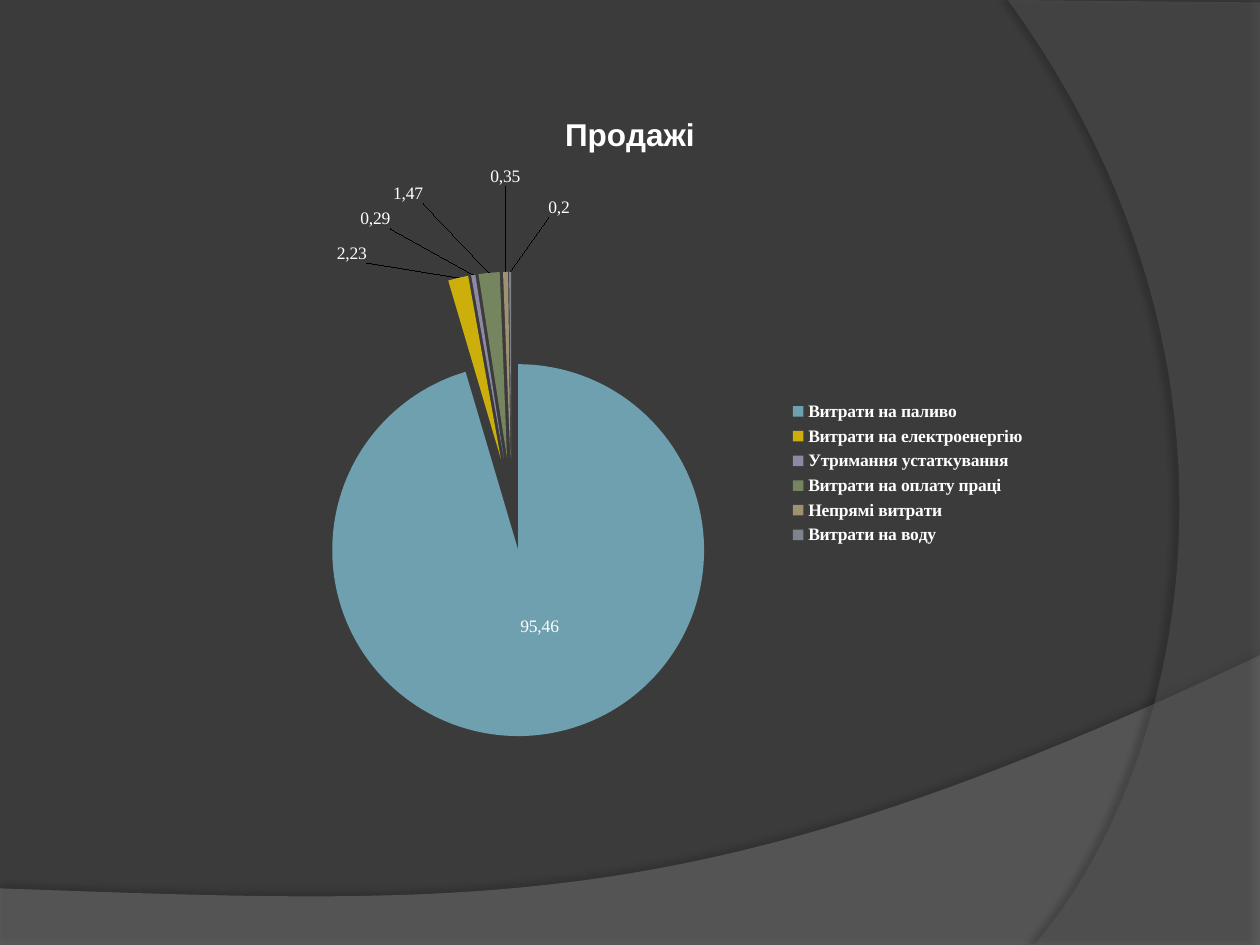
from lxml import etree
from pptx import Presentation
from pptx import util as u
from pptx.chart.data import CategoryChartData
from pptx.dml.color import RGBColor
from pptx.enum import chart as kinds
from pptx.oxml import ns

HUES = {"back": "3B3B3B", "wave": "7F7F7F", "arc": "5E5E5E", "text": "FFFFFF", "dark": "000000"}
COSTS = [
    ("Витрати на паливо", 95.53, "95,46", "6EA0B0", (0.01, -0.02)),
    ("Витрати на електроенергію", 1.75, "2,23", "CCAF0A", (-0.11, -0.01)),
    ("Утримання устаткування", 0.36, "0,29", "8D89A4", (-0.1, -0.05)),
    ("Витрати на оплату праці", 1.83, "1,47", "748560", (-0.08, -0.08)),
    ("Непрямі витрати", 0.44, "0,35", "9E9273", (0, -0.1)),
    ("Витрати на воду", 0.19, "0,2", "7E848D", (0.06, -0.06)),
]


def bend(a, b, c, d, steps=48):
    """Return points along a cubic curve from a to d."""
    rows = []
    for i in range(1, steps + 1):
        t = i / steps
        s = 1 - t
        rows.append(tuple(s**3 * p + 3 * s * s * t * q + 3 * s * t * t * r + t**3 * e
                          for p, q, r, e in zip(a, b, c, d)))
    return rows


def add(node, tag, **attrs):
    """Append a child element with the given attributes."""
    return etree.SubElement(node, ns.qn(tag), {k: str(v) for k, v in attrs.items()})


def place(node, index, modes=(), **spots):
    """Put a manual layout into a chart element."""
    for old in node.findall(ns.qn("c:layout")):
        node.remove(old)
    box = etree.Element(ns.qn("c:layout"))
    node.insert(index, box)
    hand = add(box, "c:manualLayout")
    for tag, val in modes:
        add(hand, "c:" + tag, val=val)
    for tag, val in spots.items():
        add(hand, "c:" + tag, val=val)


class Deck:
    """Hold the style and the current slide."""

    def __init__(self, hues):
        """Start a deck with one blank slide."""
        self.hues = hues
        self.show = Presentation()
        self.show.slide_width, self.show.slide_height = u.Cm(25.4), u.Cm(19.05)
        self.slide = self.show.slides.add_slide(self.show.slide_layouts[6])
        self.paint(self.slide.background.fill, hues["back"])

    def paint(self, fill, hue):
        """Make a fill solid."""
        fill.solid()
        fill.fore_color.rgb = RGBColor.from_string(hue)

    def style(self, font, size, face, bold=False):
        """Set a font in the text colour."""
        font.size, font.name, font.bold = u.Pt(size), face, bold
        font.color.rgb = RGBColor.from_string(self.hues["text"])

    def sheet(self, hue, edge, curve, alpha, shade, dist, angle):
        """Draw a see-through curved sheet with a soft shadow."""
        dots = [(u.Cm(x), u.Cm(y)) for x, y in edge + bend(edge[-1], *curve)]
        pen = self.slide.shapes.build_freeform(*dots[0])
        pen.add_line_segments(dots[1:], close=True)
        form = pen.convert_to_shape()
        self.paint(form.fill, self.hues[hue])
        form.line.fill.background()
        form.shadow.inherit = False
        props = form.element.spPr
        tint = props.find(ns.qn("a:solidFill"))[0]
        add(tint, "a:alpha", val=alpha * 1000)
        cast = add(props.find(ns.qn("a:effectLst")), "a:outerShdw", blurRad=u.Pt(4),
                   dist=u.Pt(dist), dir=angle * 60000, algn="ctr", rotWithShape=0)
        add(add(cast, "a:srgbClr", val=self.hues["dark"]), "a:alpha", val=shade * 1000)

    def pie(self, title, rows, *box):
        """Add an exploded pie chart with hand-placed labels."""
        data = CategoryChartData()
        data.categories = [row[0] for row in rows]
        data.add_series(title, [row[1] for row in rows])
        chart = self.slide.shapes.add_chart(
            kinds.XL_CHART_TYPE.PIE, *map(u.Cm, box), data).chart
        self.style(chart.font, 10, "Arial")
        chart.has_title = True
        head = chart.chart_title.text_frame
        head.text = title
        self.style(head.paragraphs[0].font, 18, "Arial", True)
        chart.has_legend = True
        chart.legend.position = kinds.XL_LEGEND_POSITION.RIGHT
        chart.legend.include_in_layout = False
        self.style(chart.legend.font, 10, "Times New Roman", True)
        plot = chart.plots[0]
        plot.vary_by_categories = True
        ser = plot.series[0]
        tags = ser.data_labels
        tags.show_value = True
        self.style(tags.font, 10, "Times New Roman")
        spots = kinds.XL_LABEL_POSITION
        for i, (_, _, label, hue, _) in enumerate(rows):
            point = ser.points[i]
            self.paint(point.format.fill, hue)
            tag = point.data_label
            tag.text_frame.text = label
            self.style(tag.text_frame.paragraphs[0].runs[0].font, 10, "Times New Roman")
            tag.position = spots.OUTSIDE_END if i else spots.CENTER
        root = chart.element
        for node, row in zip(root.xpath(".//c:dLbl"), rows):
            place(node, 1, x=row[4][0], y=row[4][1])
        for lead in root.xpath(".//c:showLeaderLines"):
            lead.set("val", "1")
        burst = etree.Element(ns.qn("c:explosion"), val="25")
        root.xpath(".//c:ser/c:dPt")[0].addprevious(burst)
        for dot in root.xpath(".//c:dPt"):
            part = etree.Element(ns.qn("c:explosion"), val="25")
            dot.find(ns.qn("c:spPr")).addprevious(part)
        modes = [("layoutTarget", "inner"), ("xMode", "edge"), ("yMode", "edge")]
        place(root.xpath(".//c:plotArea")[0], 0, modes, x=0.07, y=0.24, w=0.57, h=0.6)


def main():
    """Build and save the slide."""
    deck = Deck(HUES)
    deck.sheet("wave", [(0, 17.91), (0, 19.08), (25.4, 19.08), (25.4, 13.21)],
               [(14.2, 18.52), (9.93, 18.26), (0, 17.91)], 45, 35, 3.5, 270)
    deck.sheet("arc", [(25.4, 0.05), (25.4, 19.05), (20.85, 19.05)],
               [(23.75, 15.72), (25.86, 7.62), (20.32, 0)], 40, 45, 4, 180)
    deck.pie("Продажі", COSTS, 4.47, 1.73, 16.46, 15.62)
    deck.show.save("out.pptx")


if __name__ == "__main__":
    main()
